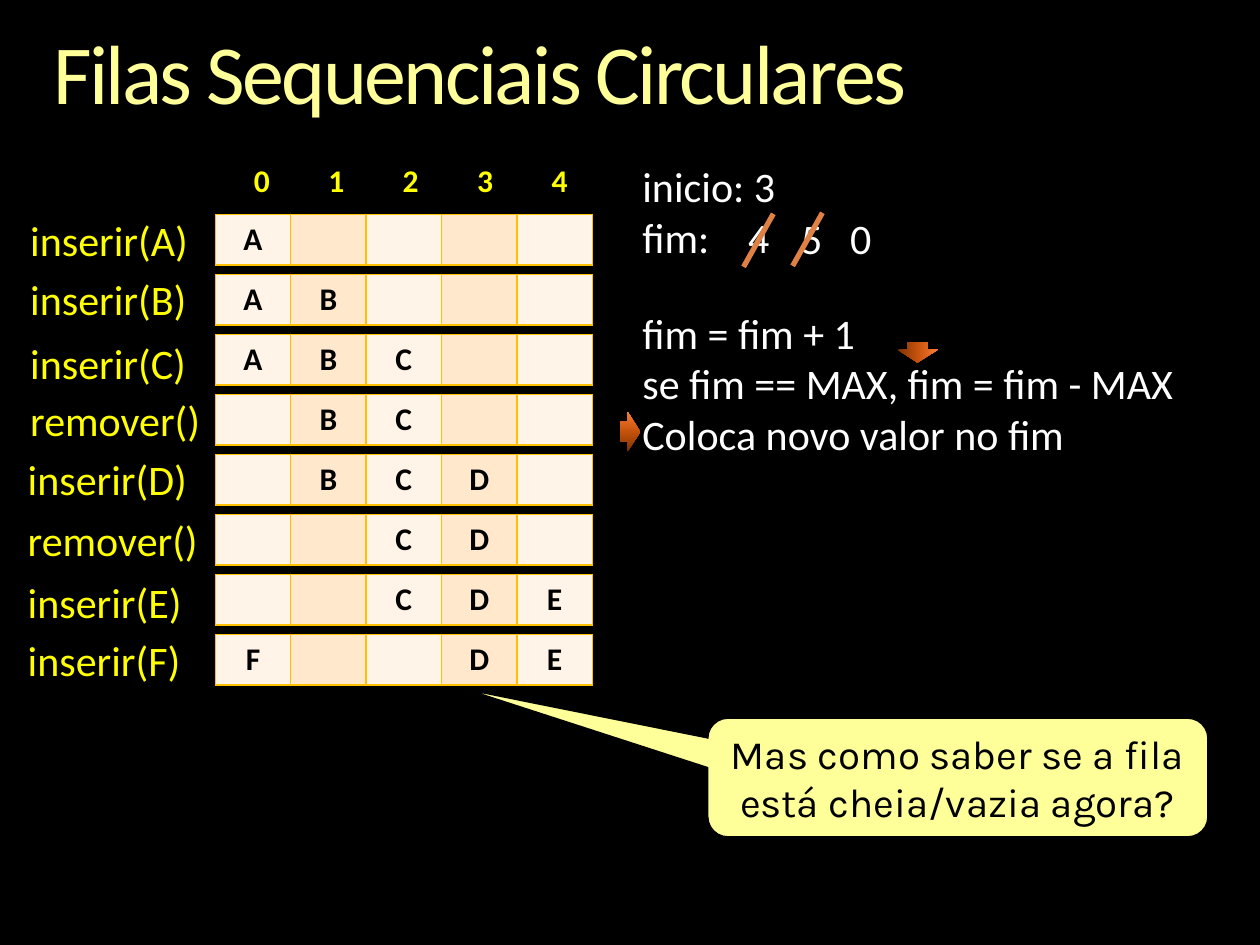
from lxml import etree
from pptx import Presentation
from pptx.dml.color import RGBColor
from pptx.enum import shapes, text
from pptx.oxml import ns
from pptx.util import Cm, Pt

COLORS = {
    "back": "000000", "ink": "000000", "label": "FFFF00", "body": "FFFFFF",
    "odd": "FFF4E7", "even": "FFE8CB", "border": "FFC000",
    "strike": "DF8045", "callout": "FFFF99",
}
TITLE_STOPS = [(0, "FFFFB9"), (36, "FFFF99"), (86, "F6AE1E")]
ARROW_STOPS = [(0, "7D3203"), (50, "C4520B"), (70, "DB631C"), (100, "FF803C")]

# operation, queue after it, label offset from the row (cm)
STEPS = [
    ("inserir(A)", "A    ", -0.03, -0.13),
    ("inserir(B)", "AB   ", -0.03, -0.15),
    ("inserir(C)", "ABC  ", -0.03, -0.06),
    ("remover()", " BC  ", -0.03, -0.13),
    ("inserir(D)", " BCD ", -0.08, -0.15),
    ("remover()", "  CD ", -0.08, -0.13),
    ("inserir(E)", "  CDE", -0.08, -0.08),
    ("inserir(F)", "F  DE", -0.08, -0.13),
]


def rgb(name):
    return RGBColor.from_string(COLORS[name])


def sub(parent, tag, **attrs):
    return etree.SubElement(parent, ns.qn(tag), attrs)


def gradient(stops, angle):
    grad = etree.Element(ns.qn("a:gradFill"), rotWithShape="1")
    gs_list = sub(grad, "a:gsLst")
    for pos, color in stops:
        gs = sub(gs_list, "a:gs", pos=str(pos * 1000))
        sub(gs, "a:srgbClr", val=color)
    sub(grad, "a:lin", ang=str(angle * 60000), scaled="0")
    return grad


def add_run(p, words, size, color, bold=False, font="Calibri"):
    r = p.add_run()
    r.text = words
    r.font.size, r.font.name, r.font.bold = Pt(size), font, bold
    r.font.color.rgb = rgb(color)
    return r


def add_tabs(p, stops, align):
    tabs = sub(p._p.get_or_add_pPr(), "a:tabLst")
    for stop in stops:
        sub(tabs, "a:tab", pos=str(Cm(stop)), algn=align)


def add_text(s, x, y, w, h, lines, color="body", size=24, bold=False):
    tf = s.shapes.add_textbox(Cm(x), Cm(y), Cm(w), Cm(h)).text_frame
    tf.word_wrap = True
    for i, line in enumerate(lines):
        p = tf.add_paragraph() if i else tf.paragraphs[0]
        add_run(p, line, size, color, bold)
    return tf


def add_title(s, x, y, w, h):
    sp = s.shapes.title
    sp.left, sp.top, sp.width, sp.height = Cm(x), Cm(y), Cm(w), Cm(h)
    tf = sp.text_frame
    tf.margin_left = tf.margin_right = tf.margin_top = tf.margin_bottom = 0
    tf.vertical_anchor = text.MSO_ANCHOR.MIDDLE
    p = tf.paragraphs[0]
    p.alignment, p.line_spacing = text.PP_ALIGN.LEFT, 0.9
    r = p.add_run()
    r.text = "Filas Sequenciais Circulares"
    r.font.size, r.font.name = Pt(48), "Calibri"
    r_pr = r._r.get_or_add_rPr()
    r_pr.set("spc", "-150")
    r_pr.insert(0, gradient(TITLE_STOPS, 90))


def style_cell(cell, letter, fill):
    cell.fill.solid()
    cell.fill.fore_color.rgb = rgb(fill)
    tc_pr = cell._tc.get_or_add_tcPr()
    for i, side in enumerate(("lnL", "lnR", "lnT", "lnB")):
        ln = etree.Element(ns.qn("a:" + side), w=str(Pt(1)))
        sub(sub(ln, "a:solidFill"), "a:srgbClr", val=COLORS["border"])
        tc_pr.insert(i, ln)
    if letter.strip():
        p = cell.text_frame.paragraphs[0]
        p.alignment = text.PP_ALIGN.CENTER
        add_run(p, letter, 18, "ink", True)


def add_queue(s, x, y, w, h, letters):
    frame = s.shapes.add_table(1, len(letters), Cm(x), Cm(y), Cm(w), Cm(h))
    table = frame.table
    table.first_row = table.horz_banding = False
    for i, letter in enumerate(letters):
        style_cell(table.cell(0, i), letter, "even" if i % 2 else "odd")


def add_steps(s, x, y, w, pitch):
    """Index header, then one labelled queue per operation."""
    label_w, header_h, row_h = 4.62, 1.2, 1.02
    queue_x = x + 3.95
    tf = add_text(s, queue_x, y, w, row_h, ["\t0\t1\t2\t3\t4"],
                  "label", 18, True)
    add_tabs(tf.paragraphs[0], [0.69 + 1.5 * i for i in range(5)], "ctr")
    for i, (name, letters, dx, dy) in enumerate(STEPS):
        top = y + header_h + i * pitch
        add_text(s, x + dx, top + dy, label_w, 1.27, [name], "label")
        add_queue(s, queue_x, top, w, row_h, letters)


def add_arrow(s, x, y, rotation=0):
    sp = s.shapes.add_shape(shapes.MSO_SHAPE.RIGHT_ARROW,
                            Cm(x), Cm(y), Cm(0.41), Cm(0.81))
    sp.adjustments[0], sp.adjustments[1] = 0.5, 0.63
    sp.rotation = rotation
    sp.shadow.inherit = False
    sp.line.fill.background()
    sp._element.spPr.insert(2, gradient(ARROW_STOPS, 270))


def add_strike(s, x, y):
    line = s.shapes.add_connector(shapes.MSO_CONNECTOR.STRAIGHT,
                                  Cm(x), Cm(y + 1.07), Cm(x + 0.6), Cm(y))
    line.line.color.rgb, line.line.width = rgb("strike"), Pt(3)
    sub(line._element.spPr, "a:effectLst")


def add_algorithm(s, x, y, w):
    # Variables, with the old values of fim struck out
    tf = add_text(s, x, y, w, 2.31, ["inicio: 3", "fim:\t4"])
    add_tabs(tf.paragraphs[1], [2.13], "l")
    for dx, value in ((3.2, "5"), (4.19, "0")):
        tf = add_text(s, x + dx, y, 1.19, 2.31, [value])
        tf.vertical_anchor = text.MSO_ANCHOR.BOTTOM
    for dx, dy in ((2.29, 1.19), (3.28, 1.17)):
        add_strike(s, x + dx, y + dy)
    # Insertion steps
    add_text(s, x, y + 2.95, w, 3.33, [
        "fim = fim + 1",
        "se fim == MAX, fim = fim - MAX",
        "Coloca novo valor no fim",
    ])
    add_arrow(s, x - 0.2, y + 5.18)
    add_arrow(s, x + 5.59, y + 3.58, 90)


def add_callout(s, x, y, w, h):
    sp = s.shapes.add_shape(shapes.MSO_SHAPE.ROUNDED_RECTANGULAR_CALLOUT,
                            Cm(x), Cm(y), Cm(w), Cm(h))
    for i, value in enumerate((-0.98, -0.74, 0.17)):
        sp.adjustments[i] = value
    sp.shadow.inherit = False
    sp.fill.solid()
    sp.fill.fore_color.rgb = rgb("callout")
    sp.line.color.rgb, sp.line.width = rgb("ink"), Pt(0.75)
    tf = sp.text_frame
    tf.word_wrap = True
    tf.vertical_anchor = text.MSO_ANCHOR.MIDDLE
    p = tf.paragraphs[0]
    p.alignment = text.PP_ALIGN.CENTER
    add_run(p, "Mas como saber se a fila está cheia/vazia agora?", 23, "ink",
            font="Karla")


def main():
    prs = Presentation()
    prs.slide_width, prs.slide_height = Cm(25.4), Cm(19.05)
    s = prs.slides.add_slide(prs.slide_layouts[5])
    s.background.fill.solid()
    s.background.fill.fore_color.rgb = rgb("back")
    add_title(s, 1.07, 0.64, 23.29, 1.85)
    add_steps(s, 0.39, 3.12, 7.6, 1.21)
    add_algorithm(s, 12.7, 3.12, 12.4)
    add_callout(s, 14.27, 14.48, 10.08, 2.39)
    prs.save("out.pptx")


if __name__ == "__main__":
    main()
